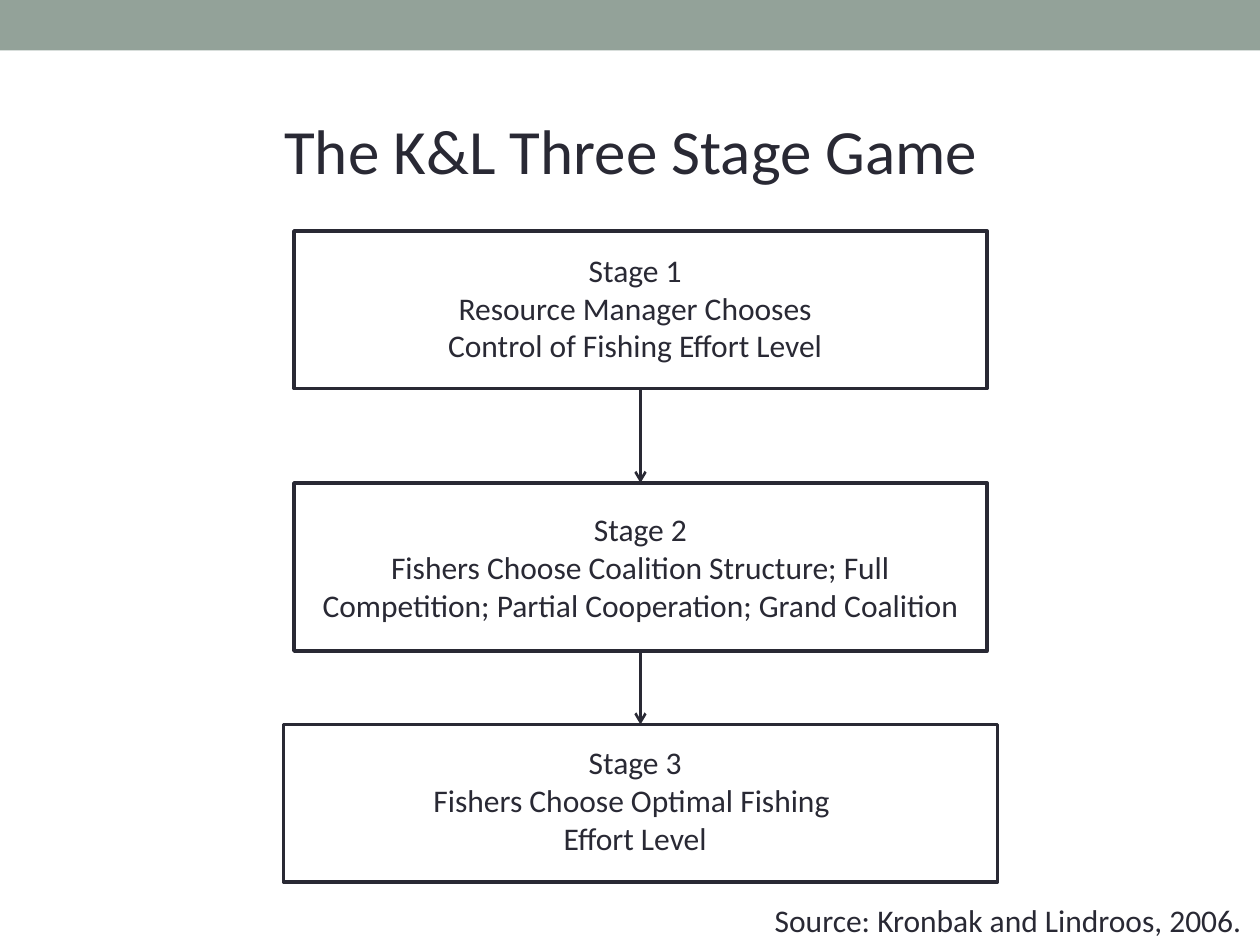
from dataclasses import dataclass

from lxml import etree
from pptx import Presentation
from pptx.dml.color import RGBColor
from pptx.enum.shapes import MSO_CONNECTOR, MSO_SHAPE
from pptx.enum.text import MSO_ANCHOR, MSO_AUTO_SIZE, PP_ALIGN
from pptx.oxml.ns import qn
from pptx.util import Inches, Pt

RECT = MSO_SHAPE.RECTANGLE
STRAIGHT = MSO_CONNECTOR.STRAIGHT
LEFT, CENTER = PP_ALIGN.LEFT, PP_ALIGN.CENTER
TOP, BOTTOM = MSO_ANCHOR.TOP, MSO_ANCHOR.BOTTOM
NO_FIT = MSO_AUTO_SIZE.NONE
BOX_TOP, BOX_BOTTOM = 0, 2
COLS, ROWS = 120, 90


@dataclass(frozen=True)
class Theme:
    font: str = "Calibri"
    ink: RGBColor = RGBColor(0x29, 0x29, 0x34)
    band: RGBColor = RGBColor(0x93, 0xA2, 0x99)
    title: Pt = Pt(36)
    body: Pt = Pt(18)
    box_line: Pt = Pt(2.08)
    arrow_line: Pt = Pt(1.5)


class SlideBuilder:
    def __init__(self, prs, theme):
        self.theme = theme
        self.slide = prs.slides.add_slide(prs.slide_layouts[5])
        self.col = prs.slide_width / COLS
        self.row = prs.slide_height / ROWS

    def place(self, left, top, width, height):
        return (round(left * self.col), round(top * self.row),
                round(width * self.col), round(height * self.row))

    def fill_text(self, tf, lines, size, align, anchor=TOP, wrap=True, spacing=None):
        tf.auto_size = NO_FIT
        tf.word_wrap = wrap
        tf.vertical_anchor = anchor
        for i, line in enumerate(lines):
            p = tf.add_paragraph() if i else tf.paragraphs[0]
            p.alignment = align
            p.line_spacing = spacing
            r = p.add_run()
            r.text = line
            r.font.name = self.theme.font
            r.font.size = size
            r.font.color.rgb = self.theme.ink

    def title(self, text, *area):
        sp = self.slide.shapes.title
        sp.left, sp.top, sp.width, sp.height = self.place(*area)
        self.fill_text(sp.text_frame, [text], self.theme.title, CENTER, BOTTOM,
                       spacing=0.8)

    def text(self, lines, *area, align=CENTER, wrap=True):
        sp = self.slide.shapes.add_textbox(*self.place(*area))
        self.fill_text(sp.text_frame, lines, self.theme.body, align, wrap=wrap)

    def rect(self, *area):
        sp = self.slide.shapes.add_shape(RECT, *self.place(*area))
        sp.shadow.inherit = False
        return sp

    def band(self, *area):
        sp = self.rect(*area)
        sp.fill.solid()
        sp.fill.fore_color.rgb = self.theme.band
        sp.line.fill.background()

    def box(self, *area):
        sp = self.rect(*area)
        sp.fill.background()
        sp.line.color.rgb = self.theme.ink
        sp.line.width = self.theme.box_line
        return sp

    def arrow(self, start, end):
        cxn = self.slide.shapes.add_connector(STRAIGHT, 0, 0, 0, 0)
        cxn.begin_connect(start, BOX_BOTTOM)
        cxn.end_connect(end, BOX_TOP)
        cxn.line.color.rgb = self.theme.ink
        cxn.line.width = self.theme.arrow_line
        props = cxn.element.spPr
        etree.SubElement(props.find(qn("a:ln")), qn("a:tailEnd"), type="arrow")
        etree.SubElement(props, qn("a:effectLst"))


STAGES = [
    ((28, 22, 66, 15), (36, 23.3, 49, 13),
     ["Stage 1", "Resource Manager Chooses", "Control of Fishing Effort Level"]),
    ((28, 46, 66, 16), (28, 48, 66, 13),
     ["Stage 2", "Fishers Choose Coalition Structure; Full Competition; "
      "Partial Cooperation; Grand Coalition"]),
    ((27, 69, 68, 15), (36, 70.2, 49, 13),
     ["Stage 3", "Fishers Choose Optimal Fishing ", "Effort Level"]),
]


def main():
    prs = Presentation()
    prs.slide_width, prs.slide_height = Inches(10), Inches(7.5)
    s = SlideBuilder(prs, Theme())
    s.band(0, 0, COLS, 4.8)
    s.title("The K&L Three Stage Game", 6.1, 3.4, 108, 15)
    boxes = []
    for box_area, text_area, lines in STAGES:
        boxes.append(s.box(*box_area))
        s.text(lines, *text_area)
    for start, end in zip(boxes, boxes[1:]):
        s.arrow(start, end)
    s.text(["Source: Kronbak and Lindroos, 2006."], 72.6, 85.2, 47.4, 4.8,
           align=LEFT, wrap=False)
    prs.save("out.pptx")


if __name__ == "__main__":
    main()
